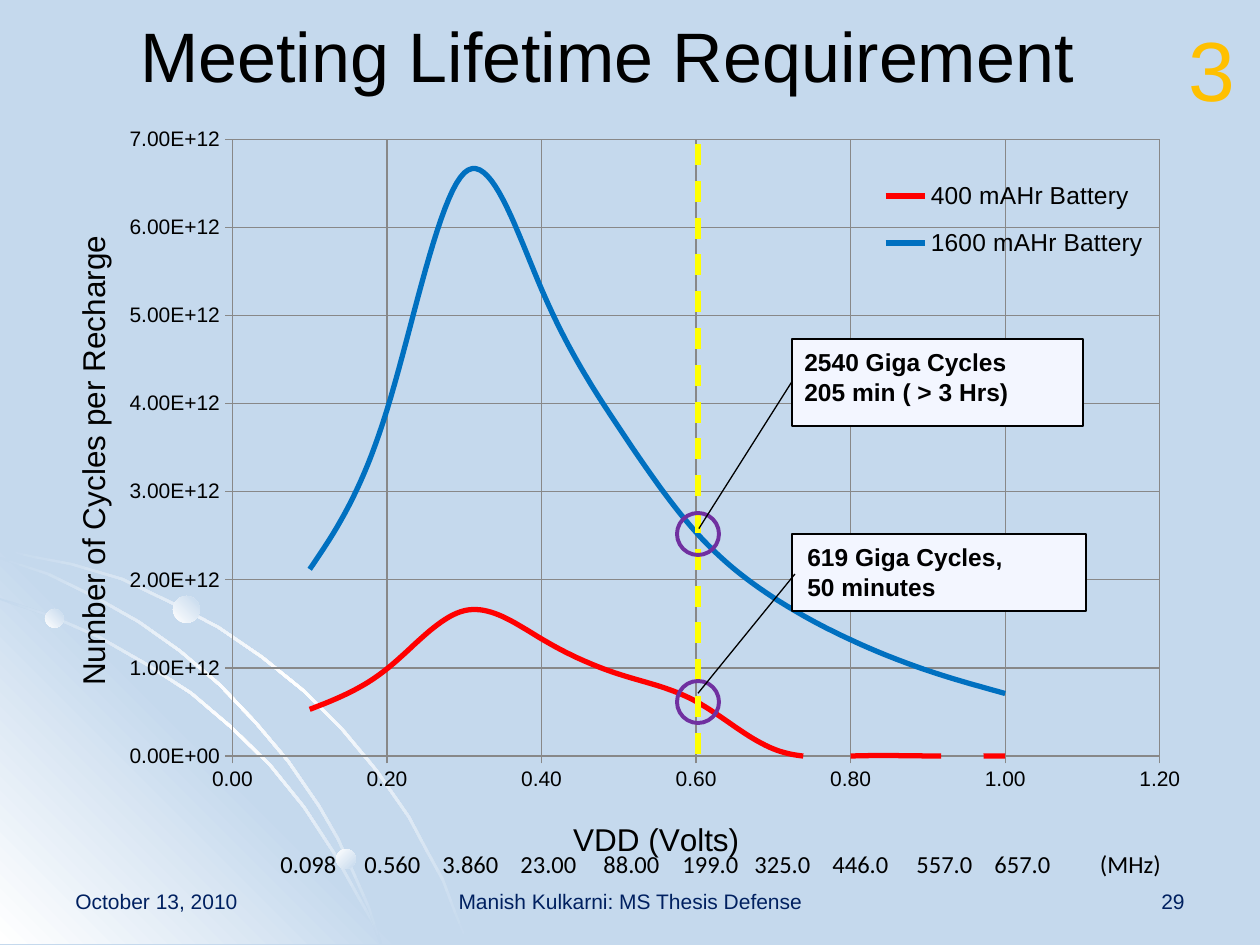
from lxml import etree
from pptx import Presentation, util as u
from pptx.chart.data import XyChartData
from pptx.dml.color import RGBColor
from pptx.enum import chart as ch, dml, shapes, text
from pptx.oxml import parse_xml
from pptx.oxml.ns import nsdecls, qn

SCALE = 914400 / 126
PALE = RGBColor(0xC5, 0xD9, 0xED)
WHITE = RGBColor(0xFF, 0xFF, 0xFF)
BLACK = RGBColor(0, 0, 0)
NAVY = RGBColor(0x00, 0x20, 0x60)
GOLD = RGBColor(0xFF, 0xC0, 0x00)
RED = RGBColor(0xFF, 0, 0)
BLUE = RGBColor(0x00, 0x70, 0xC0)
YELLOW = RGBColor(0xFF, 0xFF, 0)
PURPLE = RGBColor(0x70, 0x30, 0xA0)
CREAM = RGBColor(0xF3, 0xF6, 0xFF)
GRAY = RGBColor(0x88, 0x88, 0x88)

VOLTS = [n / 10 for n in range(1, 11)]
CURVES = [
    ("400 mAHr Battery", RED,
     [0.53, 0.99, 1.65, 1.33, 0.93, 0.62, 0.081, 0, 0.001, 0.001]),
    ("1600 mAHr Battery", BLUE,
     [2.12, 3.93, 6.62, 5.3, 3.73, 2.54, 1.8, 1.32, 0.97, 0.71]),
]
ARCS = [
    [(0, 548), (35, 556), (72, 563), (123, 578), (171, 601), (219, 626),
     (263, 656), (305, 690), (343, 728), (378, 770), (410, 816), (427, 848),
     (444, 879), (456, 911), (469, 944)],
    [(0, 598), (52, 615), (100, 636), (147, 663), (192, 692), (232, 726),
     (271, 764), (305, 806), (335, 852), (360, 897), (373, 920), (382, 944)],
    [(0, 557), (49, 573), (96, 596), (140, 621), (181, 650), (221, 684),
     (257, 722), (289, 760), (320, 805), (339, 838), (355, 873), (370, 907),
     (382, 944)],
]
RATES = ["0.098", "0.560", "3.860", "23.00", "88.00", "199.0", "325.0",
         "446.0", "557.0", "657.0", "(MHz)"]
STOPS = [38, 122, 200, 278, 361, 440, 512, 590, 674, 752, 860]


def px(*vals):
    """Turn px lengths into EMU."""
    return [u.Emu(round(v * SCALE)) for v in vals]


def write(slide, box, words, size=14, color=BLACK, face="Arial", bold=False,
          align=text.PP_ALIGN.LEFT, wrap=True):
    """Add a text box with one paragraph per line of words."""
    frame = slide.shapes.add_textbox(*px(*box)).text_frame
    frame.word_wrap = wrap
    for num, line in enumerate(words.split("\n")):
        para = frame.paragraphs[0] if num == 0 else frame.add_paragraph()
        para.alignment = align
        run = para.add_run()
        run.text = line
        style(run.font, size, color, face, bold)
    return frame


def style(font, size, color=BLACK, face="Arial", bold=False):
    """Set size, colour, face and weight of a font."""
    font.size, font.name, font.bold = u.Pt(size), face, bold
    font.color.rgb = color


def blend(shape, colors, angle):
    """Fill a shape with evenly spaced gradient colours and no line."""
    step = 100000 // (len(colors) - 1)
    marks = "".join(f'<a:gs pos="{n * step}"><a:srgbClr val="{c}"/></a:gs>'
                    for n, c in enumerate(colors))
    grad = parse_xml(f'<a:gradFill {nsdecls("a")}><a:gsLst>{marks}</a:gsLst>'
                     f'<a:lin ang="{angle * 60000}" scaled="0"/></a:gradFill>')
    shape.shadow.inherit = False
    shape.line.fill.background()
    shape.fill.background()
    props = shape._element.spPr
    props.replace(props.find(qn("a:noFill")), grad)


def trace(slide, points):
    """Draw a closed outline through px points."""
    pen = slide.shapes.build_freeform(*points[0], scale=SCALE)
    pen.add_line_segments(points[1:], close=True)
    return pen.convert_to_shape()


def decor(slide, box):
    """Draw the corner glow, its arcs and its beads."""
    left, top, wide, high = box
    low = top + high
    ribs = [pts + [(max(0, x - 2), min(low, y + 2)) for x, y in pts[::-1]]
            for pts in ARCS]
    wedge = [(left, low), (left, top - 10), (left + wide, low)]
    blend(trace(slide, ribs[0]), [PALE, WHITE, PALE], 45)
    blend(trace(slide, wedge), [WHITE, PALE, WHITE], 315)
    for rib in ribs[1:]:
        blend(trace(slide, rib), [PALE, WHITE, PALE], 45)
    for x, y, size, angle in [(45, 609, 19, 315), (336, 849, 20, 45),
                              (173, 596, 27, 315)]:
        bead = slide.shapes.add_shape(shapes.MSO_SHAPE.OVAL,
                                      *px(x, y, size, size))
        blend(bead, [WHITE, PALE], angle)


def place(node, after, inner=False, **spots):
    """Give a chart part a manual layout, set after a named child."""
    old = node.find(qn("c:layout"))
    if old is not None:
        node.remove(old)
    lay = etree.Element(qn("c:layout"))
    man = etree.SubElement(lay, qn("c:manualLayout"))
    if inner:
        etree.SubElement(man, qn("c:layoutTarget")).set("val", "inner")
    for key in "xy":
        etree.SubElement(man, qn(f"c:{key}Mode")).set("val", "edge")
    for key, val in spots.items():
        etree.SubElement(man, qn(f"c:{key}")).set("val", str(val))
    if after:
        node.find(qn(after)).addnext(lay)
    else:
        node.insert(0, lay)


def setup(axis, name, top, step, form, x, y):
    """Format one axis and place its title."""
    axis.minimum_scale, axis.maximum_scale, axis.major_unit = 0, top, step
    axis.has_major_gridlines = True
    for line in (axis.format.line, axis.major_gridlines.format.line):
        line.color.rgb, line.width = GRAY, u.Pt(0.75)
    axis.major_tick_mark = ch.XL_TICK_MARK.OUTSIDE
    labels = axis.tick_labels
    labels.number_format, labels.number_format_is_linked = form, False
    style(labels.font, 12)
    title = axis.axis_title
    title.text_frame.text = name
    style(title.text_frame.paragraphs[0].runs[0].font, 18)
    place(title._element, "c:tx", x=x, y=y)


def graph(slide, box):
    """Draw the cycle curves."""
    data = XyChartData()
    for name, _, vals in CURVES:
        row = data.add_series(name)
        for volt, val in zip(VOLTS, vals):
            row.add_data_point(volt, round(val * 10 ** 12))
    chart = slide.shapes.add_chart(
        ch.XL_CHART_TYPE.XY_SCATTER_SMOOTH_NO_MARKERS, *px(*box), data).chart
    chart.has_title = False
    style(chart.font, 10)
    plot = chart.plots[0]
    plot.vary_by_categories = False
    for row, (_, color, _) in zip(plot.series, CURVES):
        row.format.line.color.rgb, row.format.line.width = color, u.Pt(3)
        row.marker.style = ch.XL_MARKER_STYLE.NONE
        row._element.find(qn("c:smooth")).set("val", "1")
    setup(chart.category_axis, "VDD (Volts)", 1.2, 0.2, "0.00", 0.45, 0.93)
    setup(chart.value_axis, "Number of Cycles per Recharge", 7 * 10 ** 12,
          10 ** 12, "0.00E+00", 0.03, 0.16)
    chart.has_legend = True
    key = chart.legend
    key.position, key.include_in_layout = ch.XL_LEGEND_POSITION.RIGHT, True
    style(key.font, 14)
    place(key._element, "c:legendPos", x=0.71, y=0.07, w=0.23, h=0.15)
    area = chart._chartSpace.chart.plotArea
    place(area, None, inner=True, x=0.169, y=0.039, w=0.778, h=0.815)


def mark(slide, box):
    """Draw the dashed limit line and ring its two crossings."""
    left, top, wide, high = box
    mid = left + wide // 2
    line = slide.shapes.add_connector(shapes.MSO_CONNECTOR.STRAIGHT,
                                      *px(mid, top, mid, top + high))
    line.line.color.rgb, line.line.width = YELLOW, u.Pt(3)
    line.line.dash_style = dml.MSO_LINE.DASH
    etree.SubElement(line._element.spPr, qn("a:effectLst"))
    for drop in (537, 369):
        ring = slide.shapes.add_shape(shapes.MSO_SHAPE.OVAL,
                                      *px(left, top + drop, wide, wide))
        ring.shadow.inherit = False
        ring.fill.background()
        ring.line.color.rgb, ring.line.width = PURPLE, u.Pt(2.25)


def note(slide, box, words, tail, shift=0):
    """Draw a callout with its text."""
    left, top, _, _ = box
    flag = slide.shapes.add_shape(shapes.MSO_SHAPE.LINE_CALLOUT_1, *px(*box))
    for num, val in enumerate(tail):
        flag.adjustments[num] = val
    flag.shadow.inherit = False
    flag.fill.solid()
    flag.fill.fore_color.rgb = CREAM
    flag.line.color.rgb, flag.line.width = BLACK, u.Pt(0.75)
    write(slide, (left + shift, top + 2, 288, 72), words, bold=True)


def scale(slide, box):
    """Write the clock rates on centred tab stops."""
    frame = write(slide, box, "\t" + "\t".join(RATES), face="Calibri")
    tabs = etree.SubElement(frame.paragraphs[0]._p.get_or_add_pPr(),
                            qn("a:tabLst"))
    for stop in STOPS:
        tab = etree.SubElement(tabs, qn("a:tab"))
        tab.set("pos", str(px(stop)[0]))
        tab.set("algn", "ctr")


def foot(slide, box):
    """Write date, name and page number."""
    left, top, wide, high = box
    way = text.PP_ALIGN
    for x, w, words, align in [
            (0, 294, "October 13, 2010", way.LEFT),
            (368, 399, "Manish Kulkarni: MS Thesis Defense", way.CENTER),
            (wide - 294, 294, "29", way.RIGHT)]:
        write(slide, (left + x, top, w, high), words, 12, NAVY, align=align)


def main():
    """Build and save the slide."""
    deck = Presentation()
    deck.slide_width, deck.slide_height = px(1260, 945)
    slide = deck.slides.add_slide(deck.slide_layouts[6])
    slide.background.fill.solid()
    slide.background.fill.fore_color.rgb = PALE
    decor(slide, (0, 548, 406, 396))
    foot(slide, (63, 882, 1134, 63))
    graph(slide, (31, 110, 1192, 758))
    mark(slide, (677, 144, 42, 612))
    note(slide, (792, 534, 294, 77), "619 Giga Cycles,\n50 minutes",
         (0.52, 0.01, 2.07, -0.32), 3)
    note(slide, (792, 339, 291, 87), "2540 Giga Cycles\n205 min ( > 3 Hrs)",
         (0.49, 0, 2.18, -0.32))
    write(slide, (40, 6, 1134, 157), "Meeting Lifetime Requirement", 40,
          align=text.PP_ALIGN.CENTER)
    write(slide, (1176, 11, 49, 115), "3", 48, GOLD, wrap=False)
    scale(slide, (258, 843, 992, 72))
    deck.save("out.pptx")


if __name__ == "__main__":
    main()
